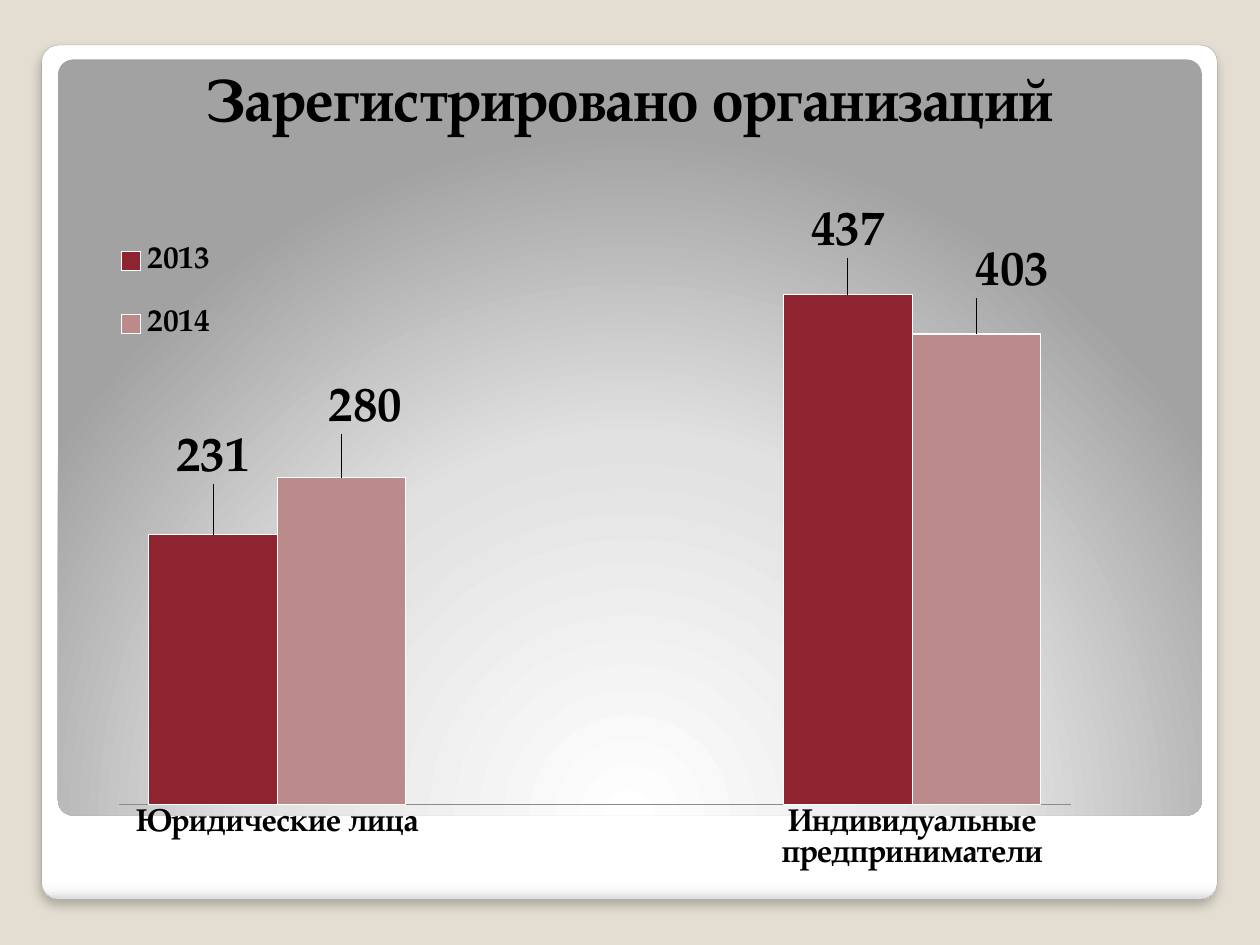
from lxml import etree
from pptx import Presentation
from pptx import util as u
from pptx.chart.data import CategoryChartData
from pptx.dml.color import RGBColor
from pptx.enum import chart as ch, shapes, text
from pptx.oxml import parse_xml
from pptx.oxml.ns import nsdecls, qn

FONT = "TeX Gyre Pagella"
BLACK = RGBColor(0, 0, 0)
WHITE = RGBColor(255, 255, 255)
SAND = RGBColor(0xE3, 0xDE, 0xD1)
GREY = RGBColor(0x8B, 0x8B, 0x8B)
EDGE = RGBColor(0xA4, 0xA4, 0xA4)
WINE = RGBColor(0x8E, 0x24, 0x30)
ROSE = RGBColor(0xBB, 0x8A, 0x8B)

CATS = ["Юридические лица", "", "Индивидуальные предприниматели"]
# Name, values, colour, label shifts by point as shares of the chart
SERIES = [
    ("2013", (231, None, 437), WINE, {0: (0, -0.06), 2: (0, -0.04)}),
    ("2014", (280, None, 403), ROSE, {0: (0.02, -0.05), 2: (0.03, -0.04)}),
]
LINEAR = '<a:lin ang="5400000" scaled="0"/>'
RADIAL = ('<a:path path="circle"><a:fillToRect l="50000" t="175000" '
          'r="50000" b="-75000"/></a:path>')
SHADOW = (f'<a:effectLst {nsdecls("a")}><a:outerShdw blurRad="76200" '
          'dist="50800" dir="5400000" algn="tl" rotWithShape="0">'
          '<a:srgbClr val="000000"><a:alpha val="25000"/></a:srgbClr>'
          '</a:outerShdw></a:effectLst>')


def style(font, size, color=BLACK, bold=True, name=FONT):
    font.size, font.bold, font.name = u.Pt(size), bold, name
    font.color.rgb = color


def write(shape, words, align=text.PP_ALIGN.CENTER, **look):
    frame = shape.text_frame
    frame.text = words
    frame.word_wrap = True
    frame.vertical_anchor = text.MSO_ANCHOR.MIDDLE
    frame.auto_size = text.MSO_AUTO_SIZE.SHAPE_TO_FIT_TEXT
    para = frame.paragraphs[0]
    para.alignment = align
    style(para.runs[0].font, **look)


def panel(slide, box, stops, kind, line=None, shadow=None):
    shape = slide.shapes.add_shape(
        shapes.MSO_SHAPE.ROUNDED_RECTANGLE, *map(u.Cm, box))
    shape.adjustments[0] = 0.02
    shape.shadow.inherit = False
    if line is None:
        shape.line.fill.background()
    else:
        shape.line.color.rgb = line
        shape.line.width = u.Pt(0.16)
    marks = "".join(f'<a:gs pos="{pos * 1000}"><a:srgbClr val="{tone}"/></a:gs>'
                    for pos, tone in stops)
    props = shape._element.spPr
    props.find(qn("a:prstGeom")).addnext(parse_xml(
        f'<a:gradFill {nsdecls("a")} rotWithShape="1">'
        f'<a:gsLst>{marks}</a:gsLst>{kind}</a:gradFill>'))
    if shadow:
        props.replace(props.find(qn("a:effectLst")), parse_xml(shadow))


def layout(x, y, w=None, h=None, inner=False):
    """Make a manual chart layout; without a size, x and y are shifts."""
    root = etree.Element(qn("c:layout"))
    man = etree.SubElement(root, qn("c:manualLayout"))
    parts = [("x", x), ("y", y)]
    if w is not None:
        parts = [("xMode", "edge"), ("yMode", "edge"), *parts, ("w", w), ("h", h)]
    if inner:
        parts.insert(0, ("layoutTarget", "inner"))
    for tag, val in parts:
        etree.SubElement(man, qn(f"c:{tag}")).set("val", str(val))
    return root


def place(node, spot, after=None):
    """Give a chart part its layout, as first child or after a named one."""
    for old in node.findall(qn("c:layout")):
        node.remove(old)
    if after is None:
        node.insert(0, spot)
    else:
        node.find(qn(after)).addnext(spot)


def paint(series, color, shifts):
    series.format.fill.solid()
    series.format.fill.fore_color.rgb = color
    series.format.line.color.rgb = WHITE
    series.format.line.width = u.Pt(0.75)
    series.invert_if_negative = False
    for idx in shifts:
        label = series.points[idx].data_label
        style(label.font, 28)
        label.position = ch.XL_LABEL_POSITION.OUTSIDE_END
    for node, shift in zip(series._element.iter(qn("c:dLbl")), shifts.values()):
        place(node, layout(*shift), "c:idx")


def columns(slide, box):
    data = CategoryChartData()
    data.categories = CATS
    for name, vals, *_ in SERIES:
        data.add_series(name, vals)
    chart = slide.shapes.add_chart(
        ch.XL_CHART_TYPE.COLUMN_CLUSTERED, *map(u.Cm, box), data).chart
    style(chart.font, 18, bold=False, name="DejaVu Sans")
    chart.has_title = False
    plot = chart.plots[0]
    plot.gap_width, plot.overlap, plot.vary_by_categories = 47, 0, False
    for series, (_, _, color, shifts) in zip(plot.series, SERIES):
        paint(series, color, shifts)

    axis = chart.category_axis
    axis.major_tick_mark = axis.minor_tick_mark = ch.XL_TICK_MARK.NONE
    axis.format.line.color.rgb = GREY
    style(axis.tick_labels.font, 18)
    scale = chart.value_axis
    scale.minimum_scale, scale.maximum_scale = 0, 500
    scale.has_major_gridlines = scale.visible = False

    chart.has_legend = True
    legend = chart.legend
    legend.position = ch.XL_LEGEND_POSITION.TOP
    legend.include_in_layout = False
    style(legend.font, 18)
    place(legend._element, layout(0.05, 0.09, 0.12, 0.21), "c:legendPos")
    area = chart._chartSpace.find(".//" + qn("c:plotArea"))
    place(area, layout(0.07, 0.1, 0.8, 0.77, inner=True))


def main():
    prs = Presentation()
    prs.slide_width, prs.slide_height = u.Cm(25.4), u.Cm(19.05)
    slide = prs.slides.add_slide(prs.slide_layouts[5])
    slide.background.fill.solid()
    slide.background.fill.fore_color.rgb = SAND

    panel(slide, (0.84, 0.91, 23.7, 17.22),
          [(0, "FFFFFF"), (98, "FFFFFF"), (99, "F7F7F7"), (100, "DADADA")],
          LINEAR, line=EDGE, shadow=SHADOW)
    panel(slide, (1.17, 1.2, 23.06, 15.24),
          [(0, "FFFFFF"), (55, "E1E1E1"), (100, "A2A2A2")], RADIAL)

    title = slide.shapes.title
    title.left, title.top, title.width, title.height = map(
        u.Cm, (1.09, 1.12, 23.22, 1.7))
    write(title, "Зарегистрировано организаций", size=34)
    slide.shapes._spTree.append(title._element)  # in front of the panels

    columns(slide, (0.71, 2.92, 24, 15.29))
    prs.save("out.pptx")


if __name__ == "__main__":
    main()
